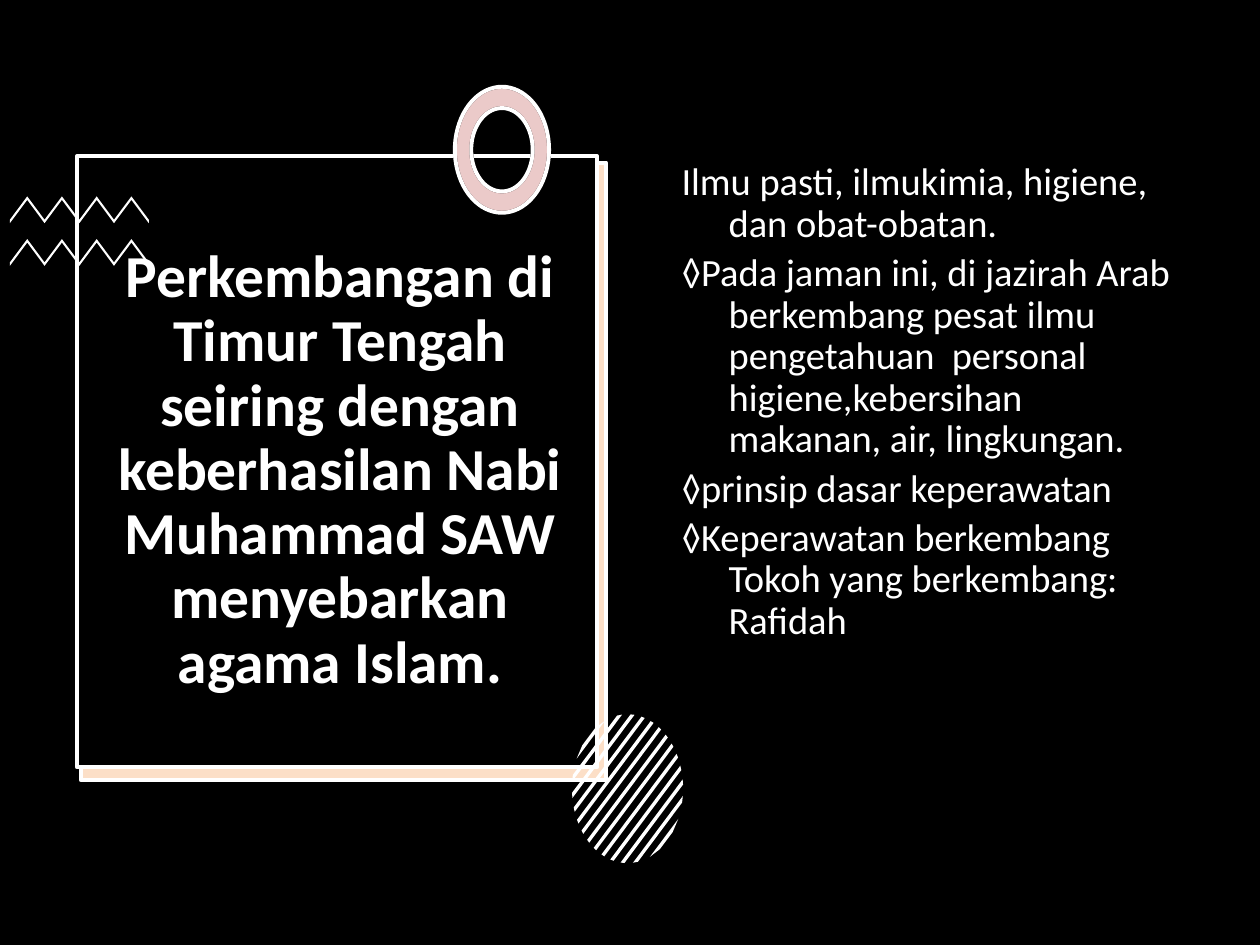
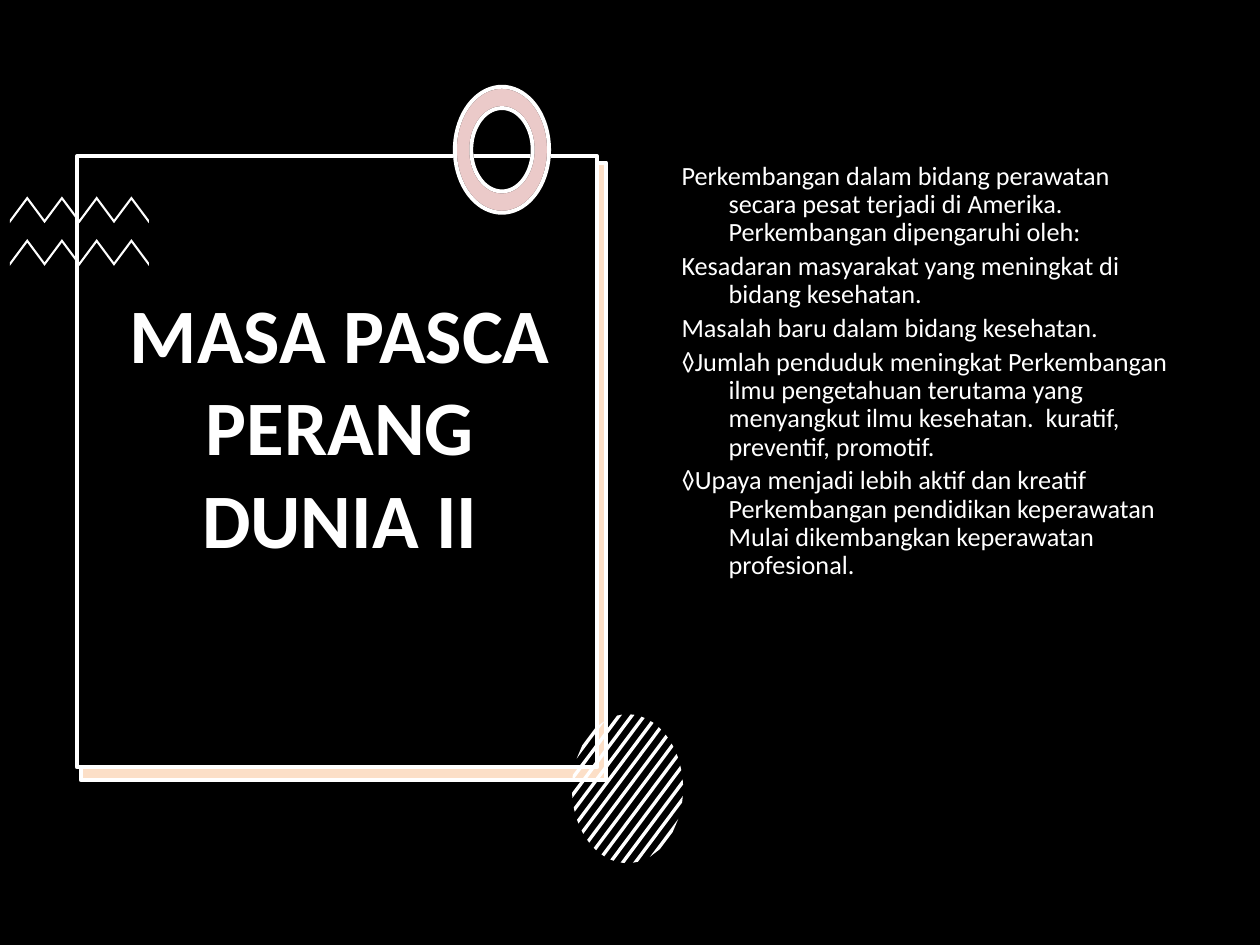
"""Build two black slides with a framed title, geometric ornaments and a text column."""
from math import acos, cos, pi, sin

from lxml import etree
from pptx import Presentation
from pptx.dml.color import RGBColor
from pptx.enum.shapes import MSO_SHAPE
from pptx.enum.text import MSO_ANCHOR, PP_ALIGN
from pptx.oxml.ns import qn
from pptx.util import Cm, Pt

RECTANGLE = MSO_SHAPE.RECTANGLE
MIDDLE = MSO_ANCHOR.MIDDLE
CENTER = PP_ALIGN.CENTER
BLACK, WHITE, ORANGE, RED = "000000", "FFFFFF", "F79646", "C0504D"
FONT = "Calibri"

SLIDES = [
    {
        "title": "Perkembangan di Timur Tengah seiring dengan keberhasilan Nabi Muhammad SAW "
                 "menyebarkan agama Islam.",
        "title_size": 34, "title_spacing": 0.9, "title_bottom": 0.13, "body_size": 22,
        "body": [
            "Ilmu pasti, ilmukimia, higiene, dan obat-obatan.",
            "◊Pada jaman ini, di jazirah Arab berkembang pesat ilmu pengetahuan  personal "
            "higiene,kebersihan makanan, air, lingkungan.",
            "◊prinsip dasar keperawatan",
            "◊Keperawatan berkembang Tokoh yang berkembang: Rafidah",
        ],
    },
    {
        "title": "MASA PASCA PERANG DUNIA II",
        "title_size": 44, "title_spacing": 1.0, "title_bottom": 1.99, "body_size": 15,
        "body": [
            "Perkembangan dalam bidang perawatan secara pesat terjadi di Amerika. "
            "Perkembangan dipengaruhi oleh:",
            "Kesadaran masyarakat yang meningkat di bidang kesehatan.",
            "Masalah baru dalam bidang kesehatan.",
            "◊Jumlah penduduk meningkat Perkembangan ilmu pengetahuan terutama yang "
            "menyangkut ilmu kesehatan.  kuratif, preventif, promotif.",
            "◊Upaya menjadi lebih aktif dan kreatif Perkembangan pendidikan keperawatan "
            "Mulai dikembangkan keperawatan profesional.",
        ],
    },
]


def paint(shape, fill, line=None, opacity=100):
    """Give a shape its fill, opacity and outline."""
    shape.shadow.inherit = False
    shape.fill.solid()
    shape.fill.fore_color.rgb = RGBColor.from_string(fill)
    if opacity < 100:
        color = shape.fill._xPr.find(qn("a:solidFill"))[0]
        etree.SubElement(color, qn("a:alpha")).set("val", str(opacity * 1000))
    if line:
        shape.line.color.rgb = RGBColor.from_string(line)
        shape.line.width = Pt(2.25)
    else:
        shape.line.fill.background()


def add_outline(page, *contours):
    """Add one closed freeform from contours given in centimetres."""
    contours = [[(Cm(x), Cm(y)) for x, y in contour] for contour in contours]
    builder = page.shapes.build_freeform(*contours[0][0], scale=1.0)
    builder.add_line_segments(contours[0][1:], close=True)
    for contour in contours[1:]:
        builder.move_to(*contour[0])
        builder.add_line_segments(contour[1:], close=True)
    return builder.convert_to_shape()


zigzag_top = [(0.2 + 0.35 * i, 3.96 if i % 2 else 4.43) for i in range(9)]
zigzag = zigzag_top + [(x, y + 0.07) for x, y in reversed(zigzag_top)]

turns = [2 * pi * i / 72 for i in range(72)]
ring_outer = [(10.12 + 0.95 * cos(t), 3.02 + 1.27 * sin(t)) for t in turns]
ring_inner = [(10.12 + 0.62 * cos(t), 3.02 + 0.84 * sin(t)) for t in reversed(turns)]

stripes = []
for k in range(-6, 7):
    near, far = acos(0.16 * k - 0.027), acos(0.16 * k + 0.027)
    angles = [pi / 4 + turn for turn in (near, far, -far, -near)]
    stripes.append([(12.65 + 1.12 * cos(a), 15.9 + 1.5 * sin(a)) for a in angles])

deck = Presentation()
deck.slide_width, deck.slide_height = Cm(25.4), Cm(19.05)

for content in SLIDES:
    page = deck.slides.add_slide(deck.slide_layouts[6])

    for place, fill, line, opacity in [
        ((0, 0, 25.4, 19.05), BLACK, None, 100),
        ((1.63, 3.3, 10.59, 12.45), WHITE, None, 100),
        ((1.63, 3.28, 10.59, 12.45), ORANGE, WHITE, 30),
        ((1.55, 3.15, 10.49, 12.32), BLACK, WHITE, 100),
    ]:
        panel = page.shapes.add_shape(RECTANGLE, *[Cm(length) for length in place])
        paint(panel, fill, line, opacity)

    for drop in (0, 0.86):
        paint(add_outline(page, [(x, y + drop) for x, y in zigzag]), WHITE)

    for fill, line, opacity in [(WHITE, BLACK, 100), (RED, WHITE, 30)]:
        paint(add_outline(page, ring_outer, ring_inner), fill, line, opacity)

    for stripe in stripes:
        paint(add_outline(page, stripe), WHITE)

    title_box = page.shapes.add_textbox(Cm(1.75), Cm(3.86), Cm(10.21), Cm(11.28))
    title_box.text_frame.vertical_anchor = MIDDLE
    title_box.text_frame.margin_bottom = Cm(content["title_bottom"])
    body_box = page.shapes.add_textbox(Cm(13.49), Cm(3.15), Cm(10.36), Cm(12.09))

    for box, texts, size in [
        (title_box, [content["title"]], content["title_size"]),
        (body_box, content["body"], content["body_size"]),
    ]:
        frame = box.text_frame
        frame.word_wrap = True
        for i, text in enumerate(texts):
            para = frame.add_paragraph() if i else frame.paragraphs[0]
            if box is title_box:
                para.alignment = CENTER
                para.line_spacing = content["title_spacing"]
            else:
                para.line_spacing = 0.9
                para.space_before = Pt(0.2 * size)
                indent = Cm(0.95)
                para._p.get_or_add_pPr().set("marL", str(indent))
                para._p.get_or_add_pPr().set("indent", str(-indent))
            span = para.add_run()
            span.text = text
            span.font.name = FONT
            span.font.size = Pt(size)
            span.font.bold = box is title_box
            span.font.color.rgb = RGBColor.from_string(WHITE)

deck.save("out.pptx")
